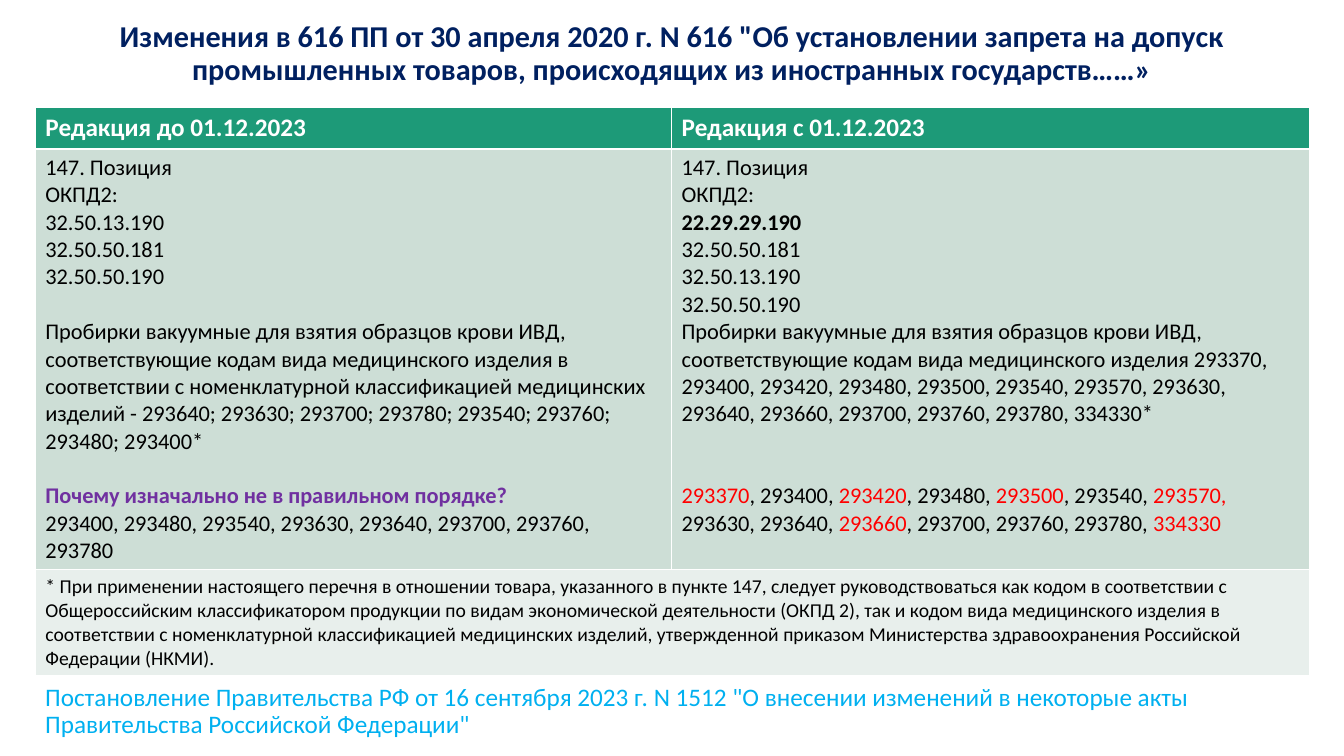
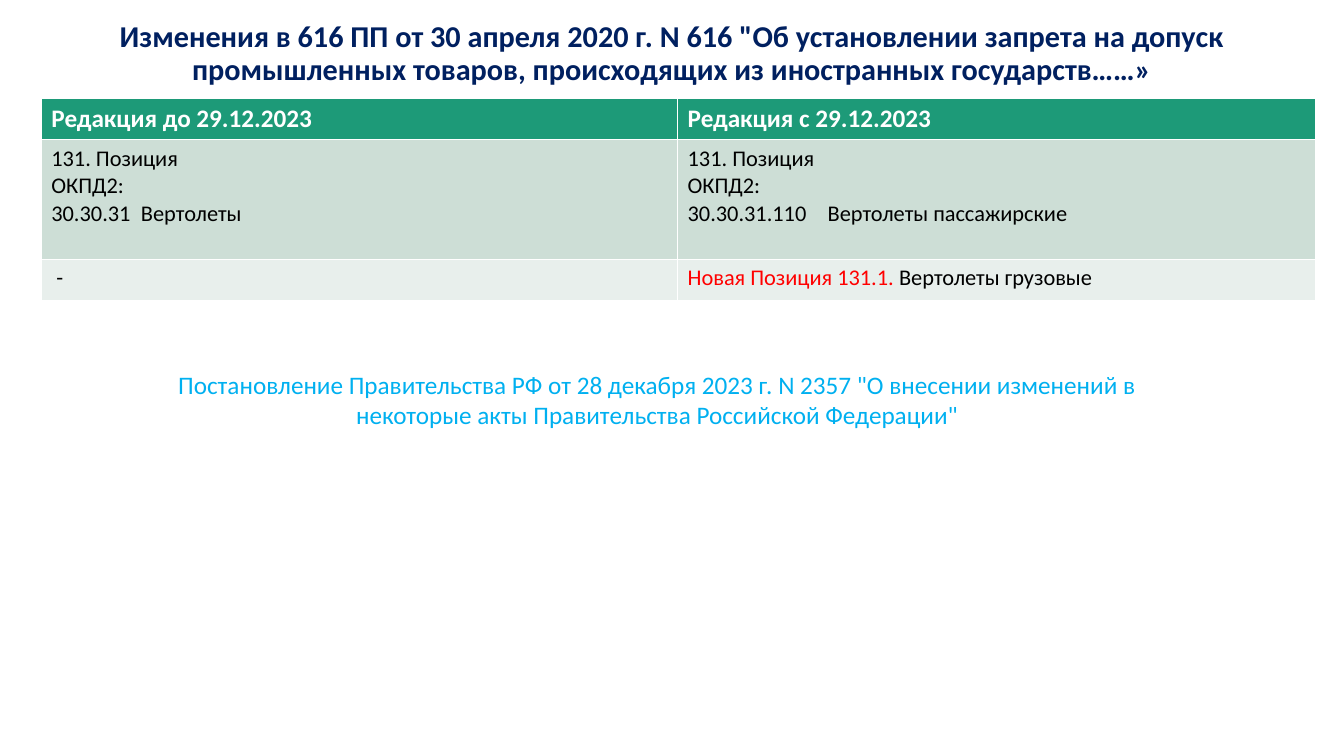
import pptx
import pptx.dml.color
import pptx.enum.text
import pptx.oxml.ns
import pptx.util
import lxml.etree

Pt = pptx.util.Pt
ALIGN = pptx.enum.text.PP_ALIGN
ANCHOR = pptx.enum.text.MSO_ANCHOR

# Shared style
FONT = "Calibri"
NAVY, SKY, PURPLE, RED = "002060", "00B0F0", "7030A0", "FF0000"
BLACK, WHITE = "000000", "FFFFFF"
ROW_FILLS = ["1D9A78", "CDDED6", "E8EFEC"]
COLUMN_WIDTHS = [454.5, 455.5]
LINE = 19.5  # height of one line of 16 pt text
TITLE = ('Изменения в 616 ПП от 30 апреля 2020 г. N 616 "Об установлении запрета на допуск '
         'промышленных товаров, происходящих из иностранных государств……»')


def rgb(color):
    return pptx.dml.color.RGBColor.from_string(color)


def write(frame, text, size=16, color=BLACK, bold=False, align=ALIGN.LEFT,
          spacing=1.0, before=0, tab=None):
    """Add one paragraph; parts between bars are red."""
    paragraph = frame.paragraphs[0]
    if paragraph.runs:
        paragraph = frame.add_paragraph()
    paragraph.alignment = align
    paragraph.line_spacing = spacing
    paragraph.space_before = Pt(before)
    if tab:
        qn = pptx.oxml.ns.qn
        tabs = lxml.etree.SubElement(paragraph._p.get_or_add_pPr(), qn("a:tabLst"))
        lxml.etree.SubElement(tabs, qn("a:tab"), pos=str(Pt(tab)), algn="l")
    for index, part in enumerate(text.split("|")):
        if part:
            run = paragraph.add_run()
            run.text = part
            run.font.name = FONT
            run.font.size = Pt(size)
            run.font.bold = bold
            run.font.color.rgb = rgb(RED if index % 2 else color)


# Content: each cell is a list of (text, format) paragraphs
header = dict(size=18, color=WHITE, bold=True)
position_147 = [("147. Позиция", {}), ("ОКПД2:", {})]
position_131 = [("131. Позиция", {}), ("ОКПД2:", {})]

before_december = position_147 + [
    ("32.50.13.190", {}),
    ("32.50.50.181", {}),
    ("32.50.50.190", {}),
    ("Пробирки вакуумные для взятия образцов крови ИВД, соответствующие кодам вида "
     "медицинского изделия в соответствии с номенклатурной классификацией медицинских "
     "изделий - 293640; 293630; 293700; 293780; 293540; 293760; 293480; 293400*",
     dict(before=LINE)),
    ("Почему изначально не в правильном порядке?",
     dict(color=PURPLE, bold=True, before=LINE)),
    ("293400, 293480, 293540, 293630, 293640, 293700, 293760, 293780", {}),
]
since_december = position_147 + [
    ("22.29.29.190", dict(bold=True)),
    ("32.50.50.181", {}),
    ("32.50.13.190", {}),
    ("32.50.50.190", {}),
    ("Пробирки вакуумные для взятия образцов крови ИВД, соответствующие кодам вида "
     "медицинского изделия 293370, 293400, 293420, 293480, 293500, 293540, 293570, "
     "293630, 293640, 293660, 293700, 293760, 293780, 334330*", {}),
    ("|293370|, 293400, |293420|, 293480, |293500|, 293540, |293570,| 293630, 293640, "
     "|293660|, 293700, 293760, 293780, |334330|", dict(before=2 * LINE)),
]
footnote = [
    ("* При применении настоящего перечня в отношении товара, указанного в пункте 147, "
     "следует руководствоваться как кодом в соответствии с Общероссийским классификатором "
     "продукции по видам экономической деятельности (ОКПД 2), так и кодом вида медицинского "
     "изделия в соответствии с номенклатурной классификацией медицинских изделий, "
     "утвержденной приказом Министерства здравоохранения Российской Федерации (НКМИ).",
     dict(size=14)),
]

# A row with a single cell spans both columns
pages = [
    dict(
        table_at=(25.2, 77), row_heights=[29.5, 300, 75.5],
        rows=[
            [[("Редакция до 01.12.2023", header)], [("Редакция с 01.12.2023", header)]],
            [before_december, since_december],
            [footnote],
        ],
        source='Постановление Правительства РФ от 16 сентября 2023 г. N 1512 "О внесении '
               'изменений в некоторые акты Правительства Российской Федерации"',
        source_at=(25.2, 485.3, 890.6, 35.3), source_format=dict(spacing=0.9),
    ),
    dict(
        table_at=(29.5, 70.4), row_heights=[29.5, 85.5, 29.2],
        rows=[
            [[("Редакция до 29.12.2023", header)], [("Редакция с 29.12.2023", header)]],
            [position_131 + [("30.30.31\tВертолеты", dict(tab=64))],
             position_131 + [("30.30.31.110\tВертолеты пассажирские", dict(tab=100))]],
            [[(" -", {})], [("|Новая Позиция 131.1. |Вертолеты грузовые", {})]],
        ],
        source='Постановление Правительства РФ от 28 декабря 2023 г. N 2357 "О внесении '
               'изменений в некоторые акты Правительства Российской Федерации"',
        source_at=(92.9, 260, 753, 51), source_format=dict(align=ALIGN.CENTER),
    ),
]

presentation = pptx.Presentation()
presentation.slide_width = Pt(960)
presentation.slide_height = Pt(540)

for page in pages:
    slide = presentation.slides.add_slide(presentation.slide_layouts[5])

    # Title
    title = slide.shapes.title
    title.left, title.top, title.width, title.height = Pt(66), Pt(10), Pt(828), Pt(57.6)
    title.text_frame.vertical_anchor = ANCHOR.MIDDLE
    write(title.text_frame, TITLE, size=21.6, color=NAVY, bold=True,
          align=ALIGN.CENTER, spacing=0.9)

    # Comparison table
    left, top = page["table_at"]
    table = slide.shapes.add_table(
        len(page["rows"]), len(COLUMN_WIDTHS), Pt(left), Pt(top),
        Pt(sum(COLUMN_WIDTHS)), Pt(sum(page["row_heights"]))).table
    for column, width in zip(table.columns, COLUMN_WIDTHS):
        column.width = Pt(width)
    for row_index, cells in enumerate(page["rows"]):
        table.rows[row_index].height = Pt(page["row_heights"][row_index])
        if len(cells) == 1:
            table.cell(row_index, 0).merge(table.cell(row_index, 1))
        for column_index, paragraphs in enumerate(cells):
            cell = table.cell(row_index, column_index)
            cell.fill.solid()
            cell.fill.fore_color.rgb = rgb(ROW_FILLS[row_index])
            for text, text_format in paragraphs:
                write(cell.text_frame, text, **text_format)

    # Reference to the decree
    source_box = slide.shapes.add_textbox(*[Pt(length) for length in page["source_at"]])
    source_box.text_frame.word_wrap = True
    write(source_box.text_frame, page["source"], size=18, color=SKY, **page["source_format"])

presentation.save("out.pptx")
